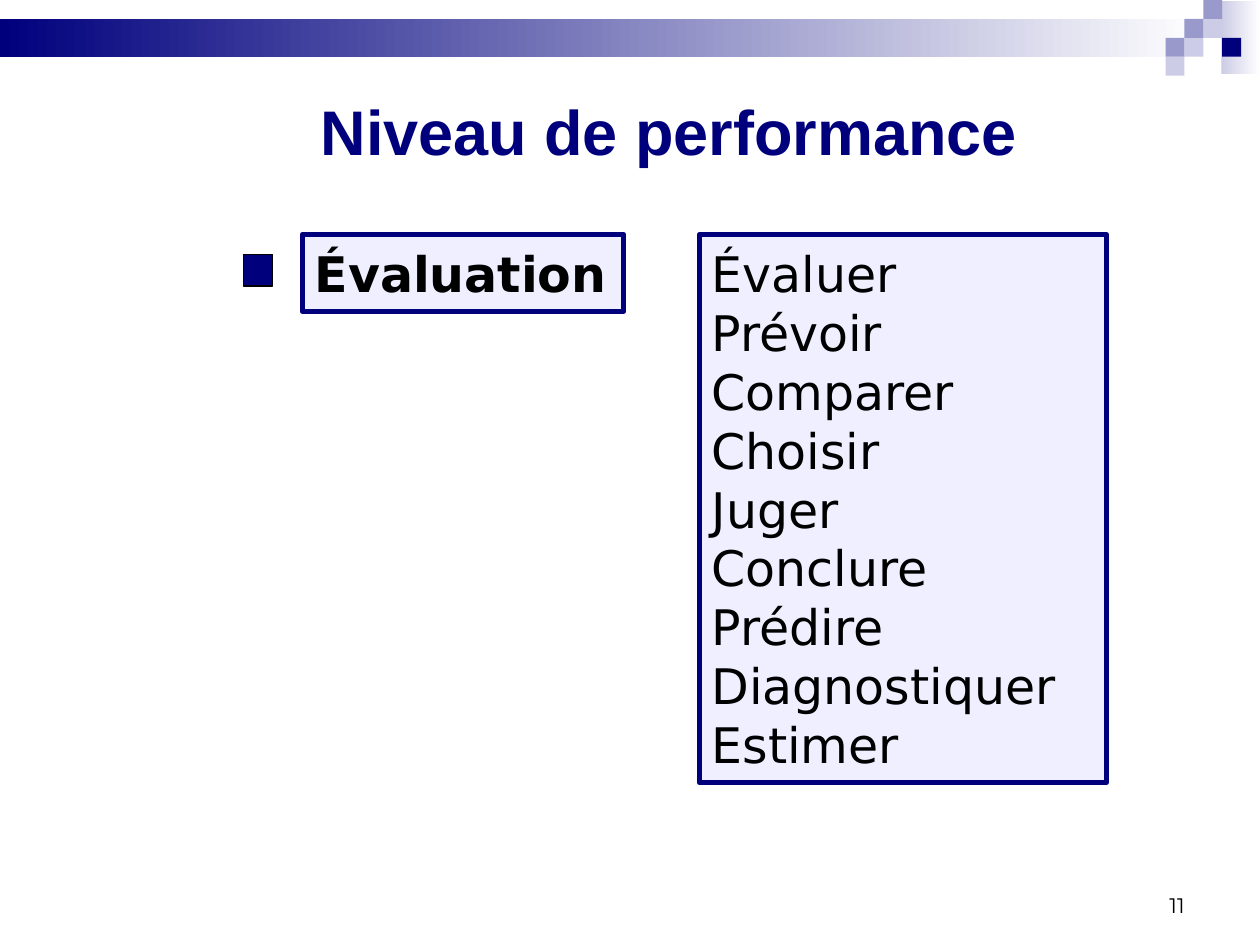
from lxml import etree
from pptx import Presentation
from pptx.dml.color import RGBColor
from pptx.enum import shapes, text
from pptx.oxml import ns
from pptx.util import Pt

COLORS = {
    "navy": "00007D",
    "violet": "9999FF",
    "mid": "9999CC",
    "light": "CCCCE6",
    "white": "FFFFFF",
    "black": "000000",
}
VERBS = ["Évaluer", "Prévoir", "Comparer", "Choisir", "Juger",
         "Conclure", "Prédire", "Diagnostiquer", "Estimer"]


def color(name):
    return RGBColor.from_string(COLORS[name])


def add_rectangle(page, box, fill, line=None, line_width=0.75):
    rectangle = page.shapes.add_shape(
        shapes.MSO_SHAPE.RECTANGLE, *[Pt(length) for length in box])
    rectangle.shadow.inherit = False
    rectangle.fill.solid()
    rectangle.fill.fore_color.rgb = color(fill)
    if line:
        rectangle.line.color.rgb = color(line)
        rectangle.line.width = Pt(line_width)
    else:
        rectangle.line.fill.background()
    return rectangle


def add_fade(page, box, start):
    """Rectangle that fades from a colour to white, left to right."""
    fill = add_rectangle(page, box, start).fill
    fill.gradient()
    fill.gradient_angle = 0
    for stop, name in zip(fill.gradient_stops, (start, "white")):
        stop.color.rgb = color(name)


def write(frame, content, font="DejaVu Sans", size=28, bold=False, ink="black",
          align=text.PP_ALIGN.LEFT, anchor=text.MSO_ANCHOR.MIDDLE, wrap=True):
    """Write one paragraph for each line of the content."""
    frame.word_wrap = wrap
    frame.vertical_anchor = anchor
    frame.text = content
    for para in frame.paragraphs:
        para.alignment = align
        para.font.name = font
        para.font.size = Pt(size)
        para.font.bold = bold
        para.font.color.rgb = color(ink)


def add_banner(page, left, top, width):
    cell = 10.8
    squares_left = left + width - 5 * cell
    add_fade(page, (squares_left + 2.95 * cell, top + 0.7, 22.3, 41.8), "light")
    add_fade(page, (left, top + cell, 687.6, 2 * cell), "navy")
    squares = [(1, 2, "light"), (0, 3, "light"), (0, 2, "mid"), (2, 1, "light"),
               (3, 2, "navy"), (1, 1, "mid"), (2, 0, "mid")]
    for column, row, fill in squares:
        add_rectangle(page, (squares_left + column * cell, top + row * cell,
                             cell, cell), fill)


def add_title(page, left, top, width, height):
    title = page.shapes.title
    title.left, title.top = Pt(left), Pt(top)
    title.width, title.height = Pt(width), Pt(height)
    write(title.text_frame, "Niveau de performance", font="Arial", size=36,
          bold=True, ink="navy", align=text.PP_ALIGN.CENTER)


def add_panel(page, box, content, **style):
    """Framed text on a translucent violet ground."""
    panel = add_rectangle(page, box, "violet", line="navy", line_width=3)
    tint = panel.fill._xPr.find(".//" + ns.qn("a:srgbClr"))
    etree.SubElement(tint, ns.qn("a:alpha"), val="15000")
    write(panel.text_frame, content, **style)


def add_level(page, left, top, name, verbs):
    """Marker, level name and list of verbs, side by side."""
    add_rectangle(page, (left, top + 11.5, 16.6, 18), "navy", line="black")
    add_panel(page, (left + 33.8, top, 183.6, 43.9), name, bold=True, wrap=False)
    add_panel(page, (left + 260.6, top, 232.6, 313.2), "\n".join(verbs))


def add_page_number(page, left, top, width, height, number):
    box = page.shapes.add_textbox(Pt(left), Pt(top), Pt(width), Pt(height))
    write(box.text_frame, str(number), font="Montserrat", size=12,
          align=text.PP_ALIGN.RIGHT, anchor=text.MSO_ANCHOR.BOTTOM)


def main():
    deck = Presentation()
    deck.slide_width, deck.slide_height = Pt(720), Pt(540)
    page = deck.slides.add_slide(deck.slide_layouts.get_by_name("Title Only"))
    add_banner(page, 0, 0, 720)
    add_page_number(page, 516, 492, 168, 36, 11)
    add_title(page, 76.3, 49, 612, 51)
    add_level(page, 139, 134, "Évaluation", VERBS)
    deck.save("out.pptx")


if __name__ == "__main__":
    main()
